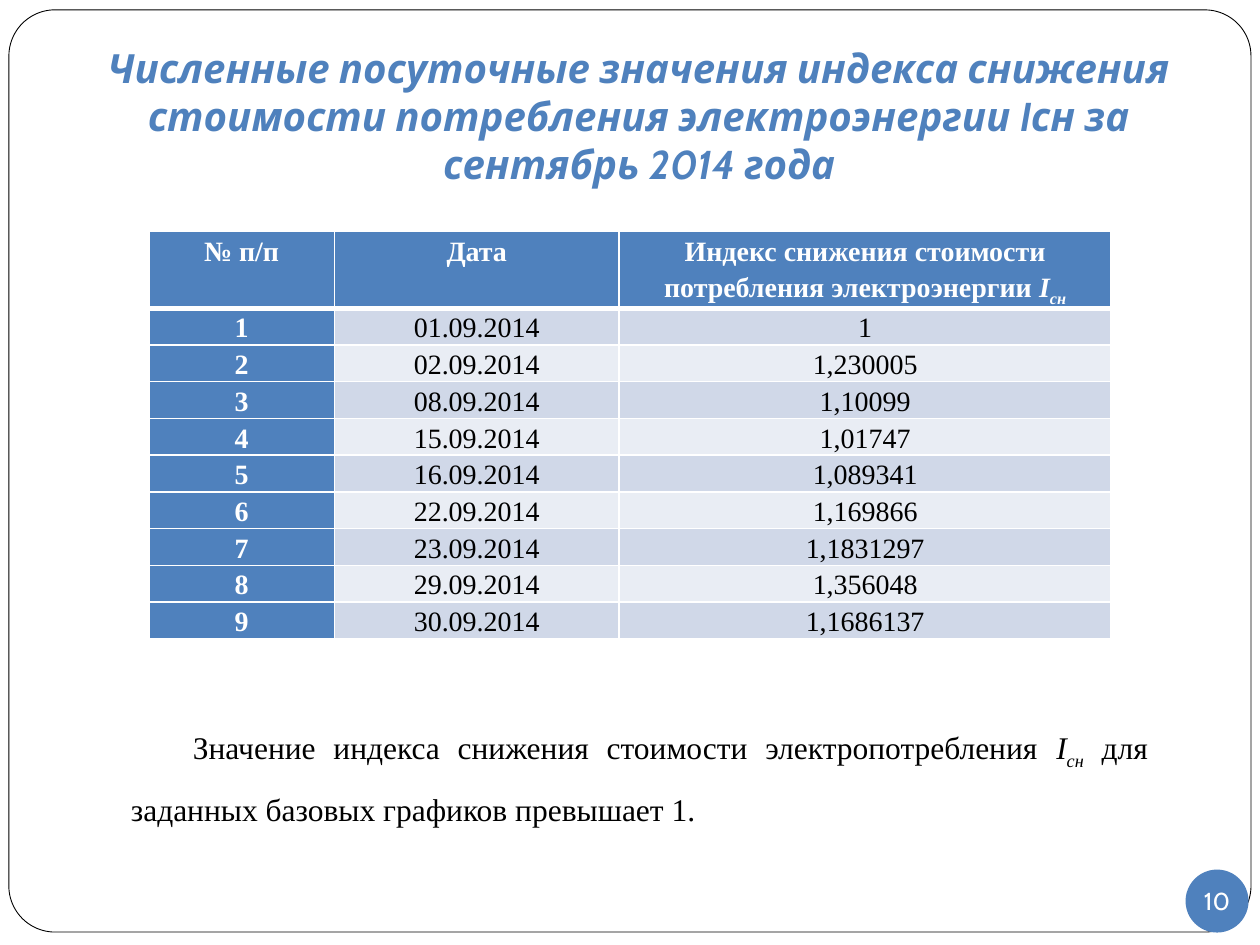
from dataclasses import dataclass

from lxml import etree
from pptx import Presentation
from pptx.dml.color import RGBColor
from pptx.enum.shapes import MSO_SHAPE
from pptx.enum.text import MSO_ANCHOR, PP_ALIGN
from pptx.oxml.ns import qn
from pptx.util import Cm, Pt

ROUNDED, OVAL = MSO_SHAPE.ROUNDED_RECTANGLE, MSO_SHAPE.OVAL
CENTER, JUSTIFY = PP_ALIGN.CENTER, PP_ALIGN.JUSTIFY
MIDDLE = MSO_ANCHOR.MIDDLE

BLUE = RGBColor(0x4F, 0x81, 0xBD)
DARK_BAND = RGBColor(0xD0, 0xD8, 0xE8)
LIGHT_BAND = RGBColor(0xE9, 0xED, 0xF4)
WHITE = RGBColor(0xFF, 0xFF, 0xFF)
BLACK = RGBColor(0x00, 0x00, 0x00)
SANS, SERIF = "Cabin", "Times New Roman"


@dataclass(frozen=True)
class Part:
    text: str
    italic: bool = False
    subscript: bool = False


@dataclass(frozen=True)
class Reading:
    date: str
    index: str


INDEX_SYMBOL = [Part("I", italic=True), Part("сн", italic=True, subscript=True)]
TITLE = [Part("Численные посуточные значения индекса снижения стоимости "
              "потребления электроэнергии Iсн за сентябрь 2014 года", italic=True)]
HEADINGS = [
    [Part("№ п/п")],
    [Part("Дата")],
    [Part("Индекс снижения стоимости потребления электроэнергии "), *INDEX_SYMBOL],
]
CONCLUSION = [
    Part("Значение индекса снижения стоимости электропотребления "),
    *INDEX_SYMBOL,
    Part(" для заданных базовых графиков превышает 1."),
]
READINGS = [
    Reading("01.09.2014", "1"),
    Reading("02.09.2014", "1,230005"),
    Reading("08.09.2014", "1,10099"),
    Reading("15.09.2014", "1,01747"),
    Reading("16.09.2014", "1,089341"),
    Reading("22.09.2014", "1,169866"),
    Reading("23.09.2014", "1,1831297"),
    Reading("29.09.2014", "1,356048"),
    Reading("30.09.2014", "1,1686137"),
]
COLUMN_WIDTHS = [Cm(3.74), Cm(5.74), Cm(9.92)]
HEADER_HEIGHT, ROW_HEIGHT = Cm(1.52), Cm(0.74)


def write(frame, parts: list[Part], *, size: float, font: str = SERIF,
          color: RGBColor = BLACK, bold: bool = False, align=CENTER,
          spacing: float = 1.0, indent: int = 0, wrap: bool = True) -> None:
    frame.word_wrap = wrap
    paragraph = frame.paragraphs[0]
    paragraph.alignment = align
    paragraph.line_spacing = spacing
    if indent:
        properties = paragraph._p.get_or_add_pPr()
        properties.set("marL", "0")
        properties.set("indent", str(int(indent)))
    for part in parts:
        run = paragraph.add_run()
        run.text = part.text
        run.font.name = font
        run.font.size = Pt(size)
        run.font.bold = bold
        run.font.italic = part.italic
        run.font.color.rgb = color
        if part.subscript:
            run._r.get_or_add_rPr().set("baseline", "-25000")


def add_panel(slide, kind, left, top, width, height, fill: RGBColor):
    panel = slide.shapes.add_shape(kind, left, top, width, height)
    panel.shadow.inherit = False
    panel.fill.solid()
    panel.fill.fore_color.rgb = fill
    panel.line.fill.background()
    return panel


def add_text(slide, parts: list[Part], left, top, width, height, **text_format) -> None:
    box = slide.shapes.add_textbox(left, top, width, height)
    write(box.text_frame, parts, **text_format)


def set_borders(cell, top: float, bottom: float) -> None:
    properties = cell._tc.get_or_add_tcPr()
    for side, width in (("lnL", 1), ("lnR", 1), ("lnT", top), ("lnB", bottom)):
        border = etree.SubElement(properties, qn(f"a:{side}"), w=str(int(Pt(width))))
        fill = etree.SubElement(border, qn("a:solidFill"))
        etree.SubElement(fill, qn("a:srgbClr"), val=str(WHITE))


def fill_cell(cell, parts: list[Part], fill: RGBColor, *, heading: bool,
              top: float = 1, bottom: float = 1) -> None:
    set_borders(cell, top, bottom)
    cell.fill.solid()
    cell.fill.fore_color.rgb = fill
    cell.margin_left = cell.margin_right = Cm(0.18)
    cell.margin_top = cell.margin_bottom = 0
    write(cell.text_frame, parts, size=16, spacing=1.15, bold=heading,
          color=WHITE if heading else BLACK)


def add_index_table(slide, left, top) -> None:
    height = HEADER_HEIGHT + ROW_HEIGHT * len(READINGS)
    table = slide.shapes.add_table(len(READINGS) + 1, len(COLUMN_WIDTHS), left, top,
                                   sum(COLUMN_WIDTHS), height).table
    for column, width in zip(table.columns, COLUMN_WIDTHS):
        column.width = width
    table.rows[0].height = HEADER_HEIGHT
    for column, heading in enumerate(HEADINGS):
        fill_cell(table.cell(0, column), heading, BLUE, heading=True, bottom=3)
    for number, reading in enumerate(READINGS, start=1):
        table.rows[number].height = ROW_HEIGHT
        band = DARK_BAND if number % 2 else LIGHT_BAND
        for column, value in enumerate((str(number), reading.date, reading.index)):
            numbering = column == 0
            fill_cell(table.cell(number, column), [Part(value)],
                      BLUE if numbering else band, heading=numbering,
                      top=3 if number == 1 else 1)


def main() -> None:
    deck = Presentation()
    deck.slide_width, deck.slide_height = Cm(25.4), Cm(19.05)
    slide = deck.slides.add_slide(deck.slide_layouts[6])

    frame = add_panel(slide, ROUNDED, Cm(0.18), Cm(0.2), Cm(25.04), Cm(18.59), WHITE)
    frame.adjustments[0] = 0.05
    frame.line.color.rgb = BLACK
    frame.line.width = Pt(0.5)

    page_badge = add_panel(slide, OVAL, Cm(23.9), Cm(17.53), Cm(1.27), Cm(1.27), BLUE)
    page_text = page_badge.text_frame
    page_text.margin_left = page_text.margin_right = 0
    page_text.margin_top = page_text.margin_bottom = 0
    page_text.vertical_anchor = MIDDLE
    write(page_text, [Part("10")], size=14, font=SANS, color=WHITE, wrap=False)

    add_index_table(slide, Cm(3), Cm(4.67))
    add_text(slide, TITLE, Cm(0.89), Cm(0.74), Cm(24), Cm(2.24),
             size=23, font=SANS, color=BLUE, bold=True)
    add_text(slide, CONCLUSION, Cm(2.39), Cm(14.12), Cm(21), Cm(2.57),
             size=18, align=JUSTIFY, spacing=1.5, indent=Cm(1.25))

    deck.save("out.pptx")


if __name__ == "__main__":
    main()
